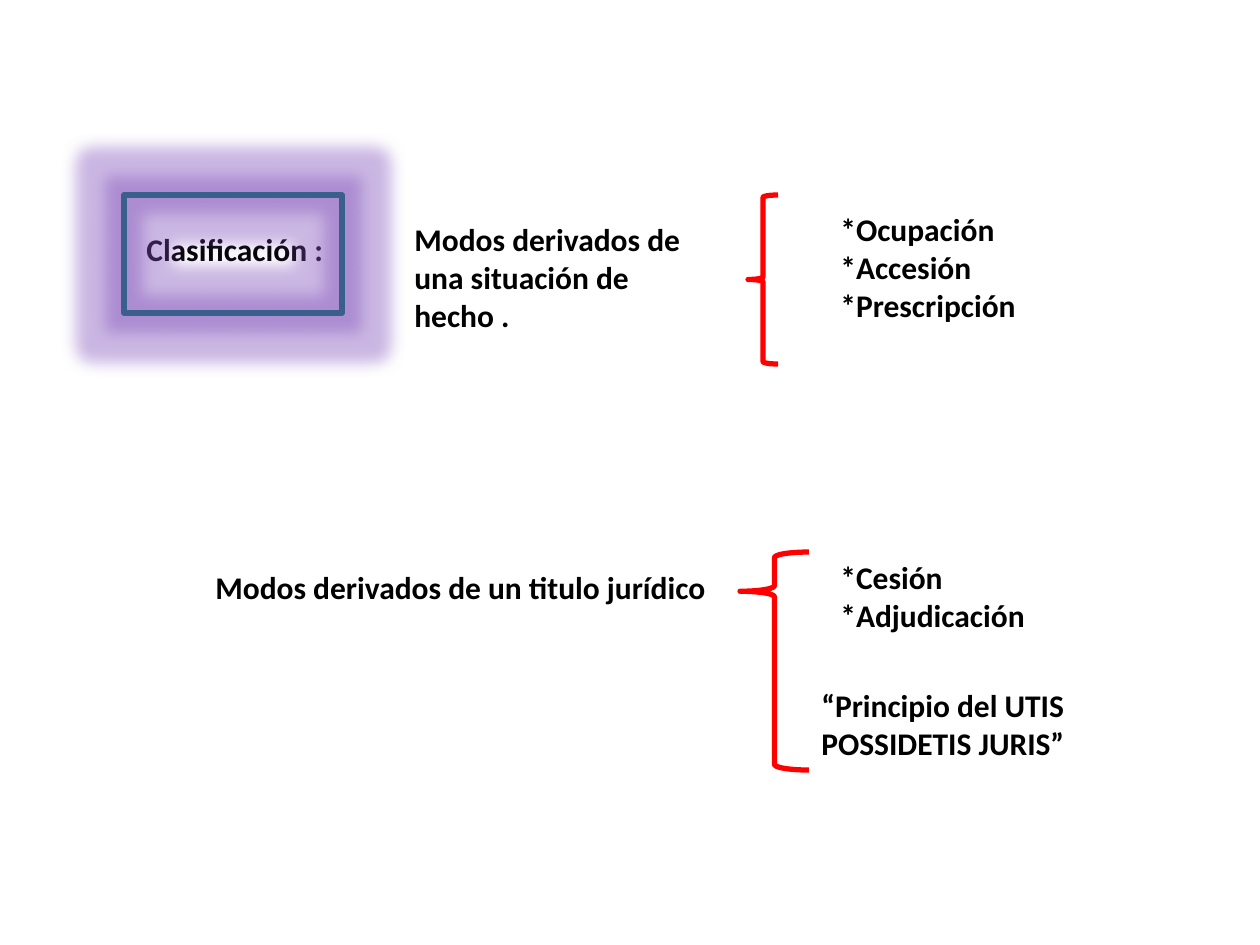
from lxml import etree
from pptx import Presentation
from pptx.dml.color import RGBColor
from pptx.enum.shapes import MSO_SHAPE
from pptx.enum.text import MSO_ANCHOR, MSO_AUTO_SIZE
from pptx.oxml.ns import qn
from pptx.util import Pt

BRACE, FRAME = MSO_SHAPE.LEFT_BRACE, MSO_SHAPE.RECTANGLE
TOP = MSO_ANCHOR.TOP
FIT_SHAPE = MSO_AUTO_SIZE.SHAPE_TO_FIT_TEXT

BLACK = RGBColor(0x00, 0x00, 0x00)
RED = RGBColor(0xFF, 0x00, 0x00)
BLUE = RGBColor(0x3A, 0x5F, 0x8C)
PURPLE = RGBColor(0x80, 0x64, 0xA2)


class Board:
    """Style and current slide; all lengths are px at 126 to the inch."""

    FONT, SIZE, LINE = "Calibri", Pt(18), Pt(3)
    EMU_PER_PX = 914400 / 126

    def __init__(self, slide):
        self.slide = slide

    def box(self, *lengths):
        return [round(n * self.EMU_PER_PX) for n in lengths]

    def text(self, left, top, width, height, *lines, wrap=False):
        label = self.slide.shapes.add_textbox(*self.box(left, top, width, height))
        frame = label.text_frame
        frame.word_wrap = wrap
        frame.auto_size = FIT_SHAPE
        frame.vertical_anchor = TOP
        frame.text = "\n".join(lines)
        for paragraph in frame.paragraphs:
            font = paragraph.font
            font.name, font.size, font.bold = self.FONT, self.SIZE, True
            font.color.rgb = BLACK

    def outline(self, kind, left, top, width, height, color):
        shape = self.slide.shapes.add_shape(kind, *self.box(left, top, width, height))
        shape.shadow.inherit = False
        shape.fill.background()
        shape.line.color.rgb = color
        shape.line.width = self.LINE
        return shape

    def brace(self, left, top, width, height, point=0.5):
        brace = self.outline(BRACE, left, top, width, height, RED)
        brace.adjustments[0] = 0.08
        brace.adjustments[1] = point

    def glowing_frame(self, left, top, width, height):
        frame = self.outline(FRAME, left, top, width, height, BLUE)
        effects = frame._element.spPr.find(qn("a:effectLst"))
        glow = etree.SubElement(effects, qn("a:glow"), rad=str(Pt(18)))
        color = etree.SubElement(glow, qn("a:srgbClr"), val=str(PURPLE))
        etree.SubElement(color, qn("a:satMod"), val="175000")
        etree.SubElement(color, qn("a:alpha"), val="40000")


def main():
    deck = Presentation()
    deck.slide_width, deck.slide_height = Board(None).box(1260, 945)
    board = Board(deck.slides.add_slide(deck.slide_layouts[6]))

    # Heading
    board.text(134, 224, 204, 50, "Clasificación :")

    # Modes derived from a factual situation
    board.text(828, 204, 202, 127, "*Ocupación", "*Accesión", "*Prescripción")
    board.text(402, 214, 318, 127,
               "Modos derivados de una situación de hecho .", wrap=True)
    board.brace(748, 195, 30, 169)

    # Modes derived from a legal title
    board.text(828, 552, 212, 89, "*Cesión", "*Adjudicación")
    board.text(203, 562, 519, 50, "Modos derivados de un titulo jurídico")
    board.brace(740, 552, 69, 218, point=0.18)
    board.text(809, 680, 318, 89,
               "“Principio del UTIS POSSIDETIS JURIS”", wrap=True)

    # Frame around the heading
    board.glowing_frame(124, 195, 218, 118)

    deck.save("out.pptx")


if __name__ == "__main__":
    main()
